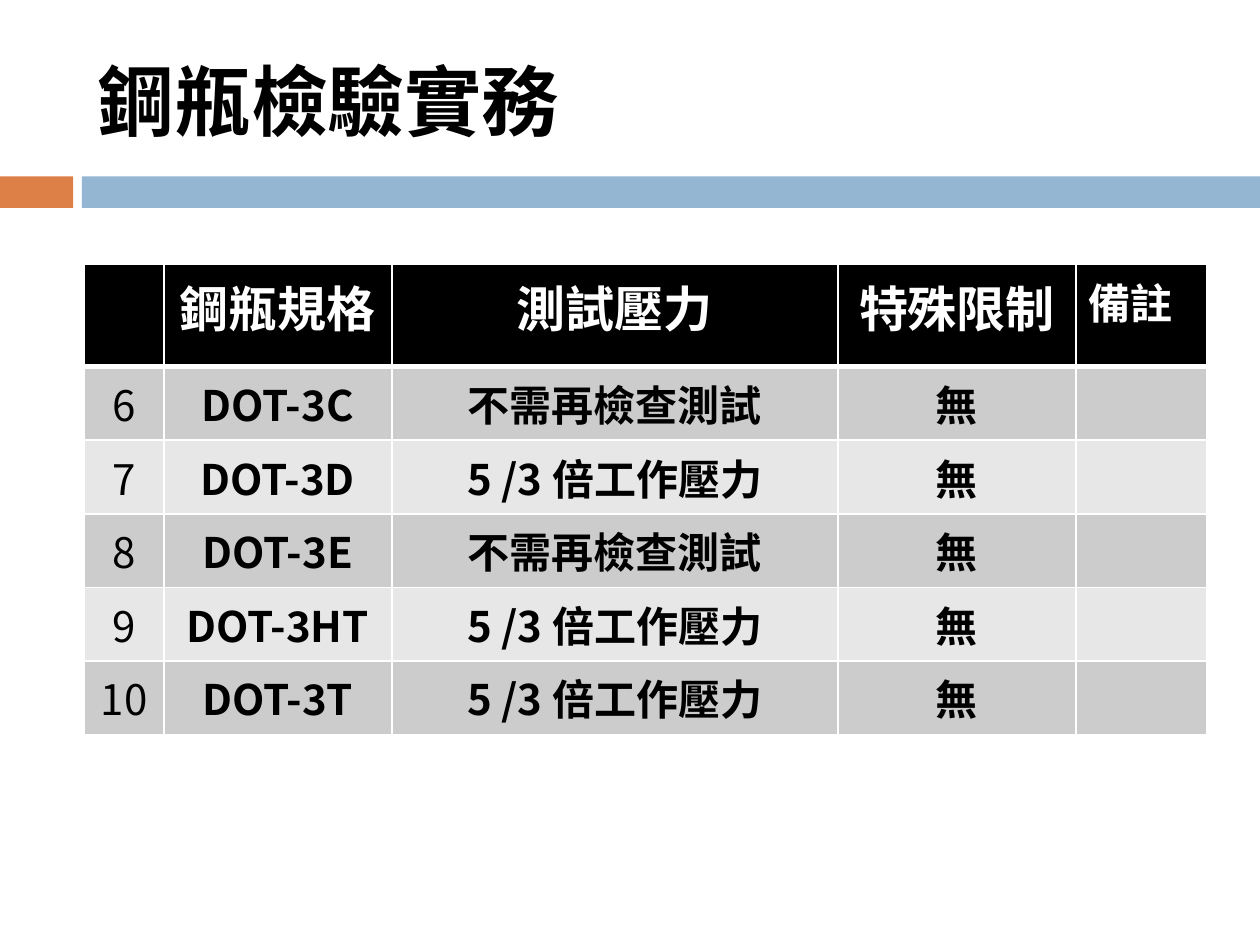
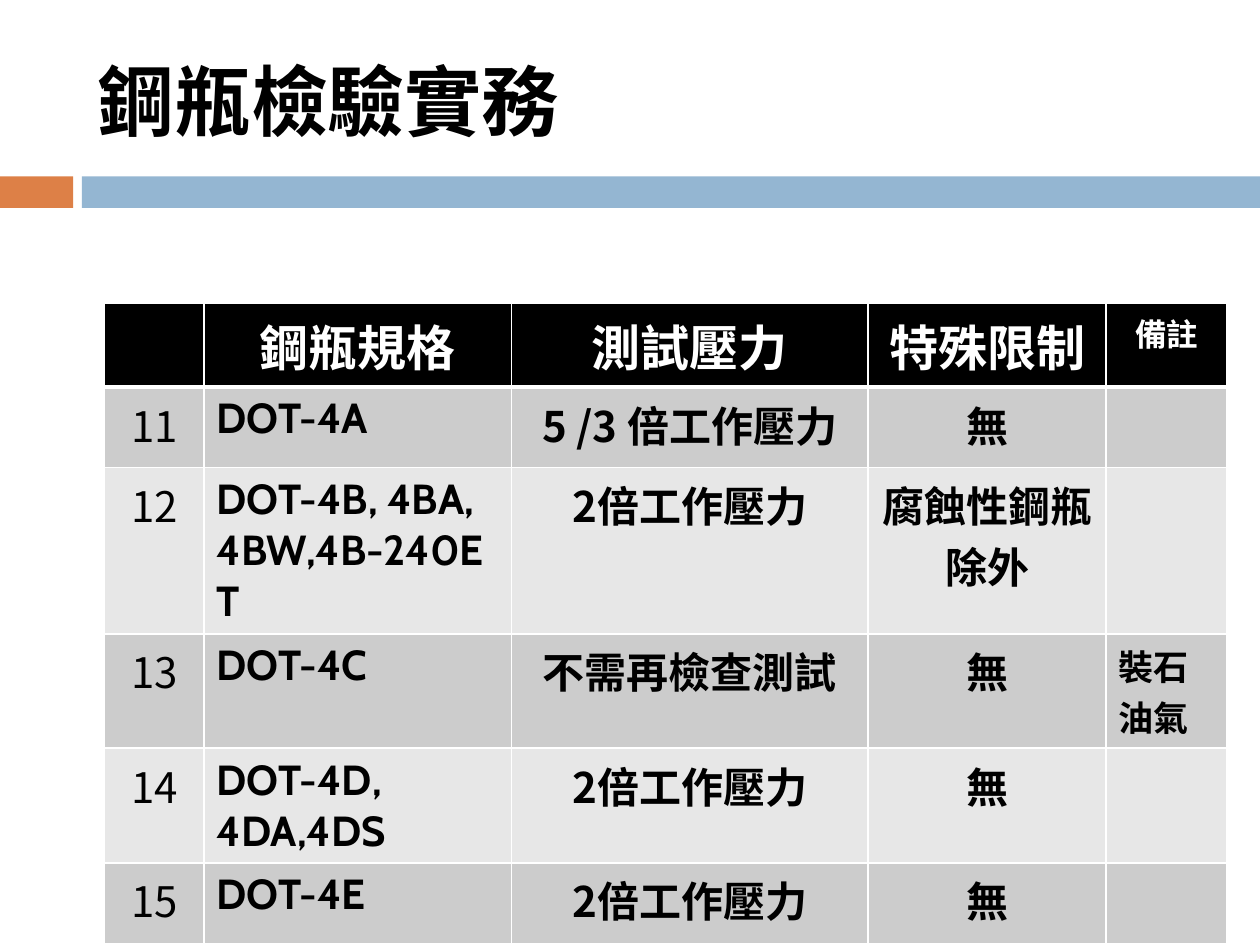
"""Build two slides of cylinder test rules, each a titled table."""
from lxml.etree import SubElement
from pptx import Presentation
from pptx.dml.color import RGBColor
from pptx.enum.shapes import MSO_SHAPE
from pptx.enum.text import MSO_ANCHOR, MSO_AUTO_SIZE, PP_ALIGN
from pptx.oxml.ns import qn
from pptx.util import Inches, Pt

BLACK = RGBColor(0x00, 0x00, 0x00)
WHITE = RGBColor(0xFF, 0xFF, 0xFF)
ORANGE = RGBColor(0xDD, 0x80, 0x47)
BLUE = RGBColor(0x94, 0xB6, 0xD2)
STRIPES = (RGBColor(0xCC, 0xCC, 0xCC), RGBColor(0xE7, 0xE7, 0xE7))
CJK_FONT = "Noto Sans CJK SC"
LATIN_FONT = "Cabin"

TITLE = "鋼瓶檢驗實務"
HEADINGS = ("", "鋼瓶規格", "測試壓力", "特殊限制", "備註")
NUMBER, MODEL, PRESSURE, LIMIT, REMARK = range(5)
NO_TEST = "不需再檢查測試"
FIVE_THIRDS = "5 /3 倍工作壓力"
DOUBLE = "2倍工作壓力"
NONE = "無"

BANDS = ((0, 0.58, ORANGE), (0.65, 9.35, BLUE))

TABLES = (
    {
        "at": (0.67, 2.1),
        "widths": (0.63, 1.81, 3.54, 1.89, 1.04),
        "heights": (0.81,) + (0.58,) * 5,
        "remark_heading": (24, PP_ALIGN.LEFT),
        "model_style": (CJK_FONT, PP_ALIGN.CENTER),
        "rows": (
            ("6", "DOT-3C", NO_TEST, NONE, ""),
            ("7", "DOT-3D", FIVE_THIRDS, NONE, ""),
            ("8", "DOT-3E", NO_TEST, NONE, ""),
            ("9", "DOT-3HT", FIVE_THIRDS, NONE, ""),
            ("10", "DOT-3T", FIVE_THIRDS, NONE, ""),
        ),
    },
    {
        "at": (0.83, 2.41),
        "widths": (0.79, 2.44, 2.83, 1.89, 0.96),
        "heights": (0.66, 0.64, 1.32, 0.9, 0.91, 0.64),
        "remark_heading": (18, PP_ALIGN.CENTER),
        "model_style": (LATIN_FONT, PP_ALIGN.LEFT),
        "rows": (
            ("11", "DOT-4A", FIVE_THIRDS, NONE, ""),
            ("12", "DOT-4B, 4BA,\n4BW,4B-240ET", DOUBLE, "腐蝕性鋼瓶除外", ""),
            ("13", "DOT-4C", NO_TEST, NONE, "裝石油氣"),
            ("14", "DOT-4D,\n4DA,4DS", DOUBLE, NONE, ""),
            ("15", "DOT-4E", DOUBLE, NONE, ""),
        ),
    },
)


def write(frame, text, size, color, bold=True, font=CJK_FONT, align=PP_ALIGN.LEFT):
    """Fill a text frame, one paragraph for each line of text."""
    for index, line in enumerate(text.split("\n")):
        paragraph = frame.add_paragraph() if index else frame.paragraphs[0]
        paragraph.alignment = align
        if not line:
            continue
        run = paragraph.add_run()
        run.text = line
        run.font.size = Pt(size)
        run.font.bold = bold
        run.font.color.rgb = color
        run.font.name = font
        east_asian = SubElement(run.font._element, qn("a:ea"))
        east_asian.set("typeface", CJK_FONT)


def style_cell(cell, fill, bottom_width=1):
    """Give a cell white borders and a solid fill."""
    properties = cell._tc.get_or_add_tcPr()
    for side, width in (("L", 1), ("R", 1), ("T", 1), ("B", bottom_width)):
        border = SubElement(properties, qn(f"a:ln{side}"), w=str(Pt(width)))
        SubElement(SubElement(border, qn("a:solidFill")), qn("a:srgbClr"), val=str(WHITE))
    cell.fill.solid()
    cell.fill.fore_color.rgb = fill


def add_titled_slide(deck):
    """Add a slide with the shared bands and title."""
    slide = deck.slides.add_slide(deck.slide_layouts[5])
    for left, width, color in BANDS:
        band = slide.shapes.add_shape(
            MSO_SHAPE.RECTANGLE, Inches(left), Inches(1.4), Inches(width), Inches(0.25))
        band.shadow.inherit = False
        band.fill.solid()
        band.fill.fore_color.rgb = color
        band.line.fill.background()
    title = slide.shapes.title
    title.left, title.top = Inches(0.67), Inches(0.25)
    title.width, title.height = Inches(8.92), Inches(1.08)
    title.text_frame.auto_size = MSO_AUTO_SIZE.NONE
    title.text_frame.vertical_anchor = MSO_ANCHOR.MIDDLE
    write(title.text_frame, TITLE, 44, BLACK)
    return slide


def add_rules_table(slide, rules):
    """Add the table of test rules."""
    widths, heights = rules["widths"], rules["heights"]
    left, top = rules["at"]
    table = slide.shapes.add_table(
        len(heights), len(widths), Inches(left), Inches(top),
        Inches(sum(widths)), Inches(sum(heights))).table
    for column, width in zip(table.columns, widths):
        column.width = Inches(width)
    for row, height in zip(table.rows, heights):
        row.height = Inches(height)

    for column, heading in enumerate(HEADINGS):
        cell = table.cell(0, column)
        style_cell(cell, BLACK, bottom_width=3)
        size, align = rules["remark_heading"] if column == REMARK else (28, PP_ALIGN.CENTER)
        write(cell.text_frame, heading, size, WHITE, align=align)

    for index, entries in enumerate(rules["rows"]):
        for column, entry in enumerate(entries):
            cell = table.cell(index + 1, column)
            style_cell(cell, STRIPES[index % 2])
            font, align = CJK_FONT, PP_ALIGN.CENTER
            if column == MODEL:
                font, align = rules["model_style"]
            elif column == REMARK:
                align = PP_ALIGN.LEFT
            write(cell.text_frame, entry, 20 if column == REMARK else 24, BLACK,
                  bold=column != NUMBER, font=font, align=align)


def main():
    """Build and save the deck."""
    deck = Presentation()
    deck.slide_width, deck.slide_height = Inches(10), Inches(7.5)
    for rules in TABLES:
        add_rules_table(add_titled_slide(deck), rules)
    deck.save("out.pptx")


if __name__ == "__main__":
    main()
